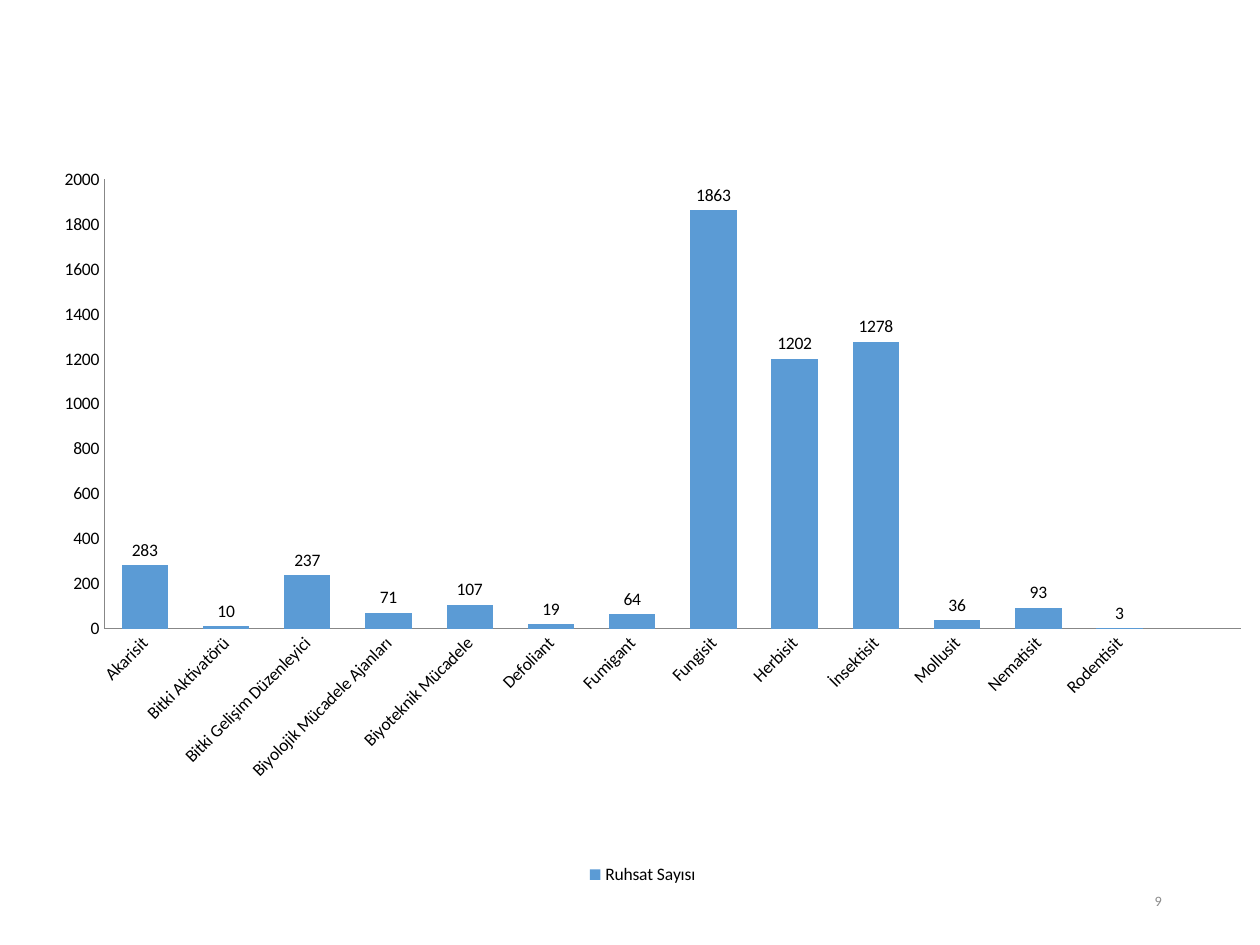
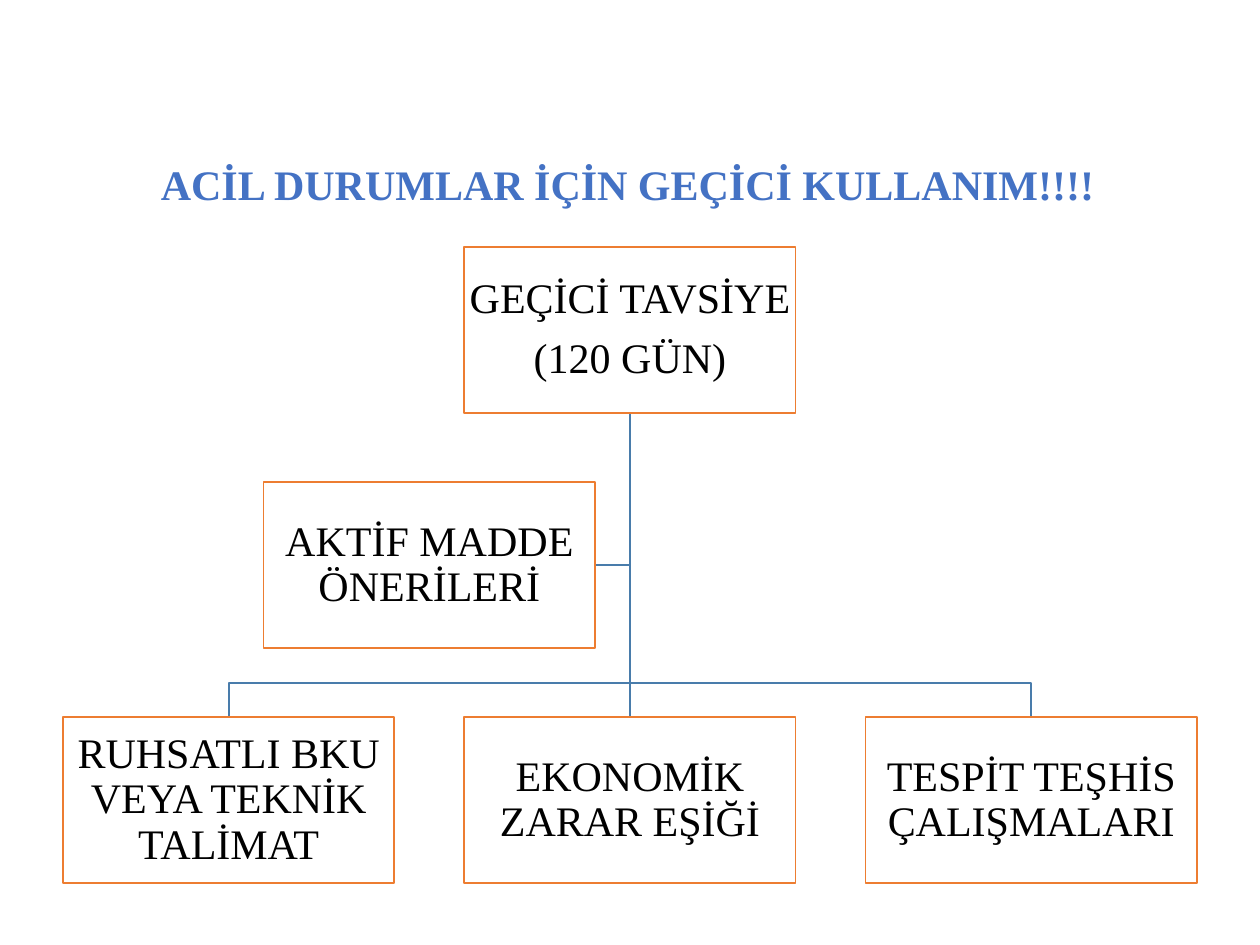
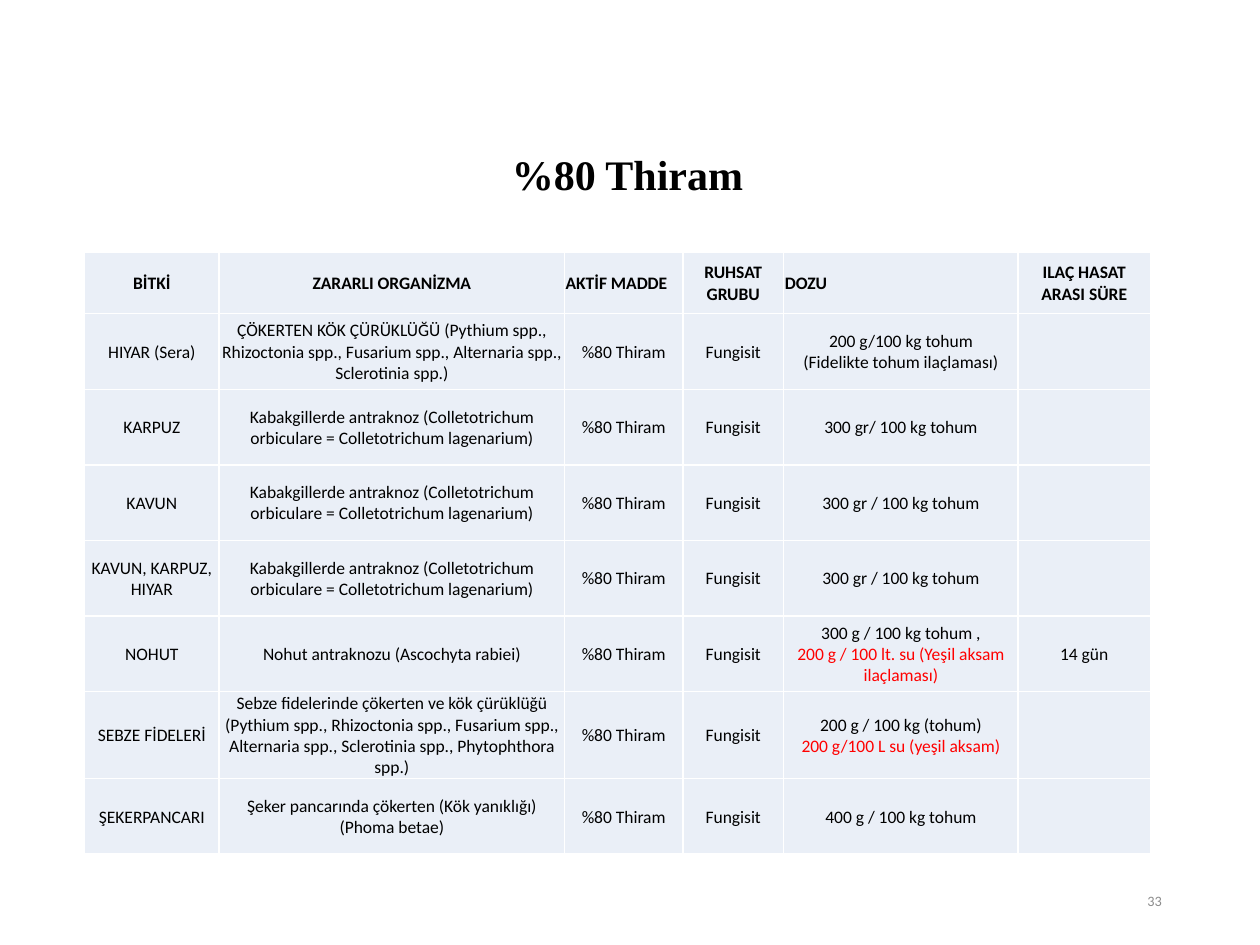
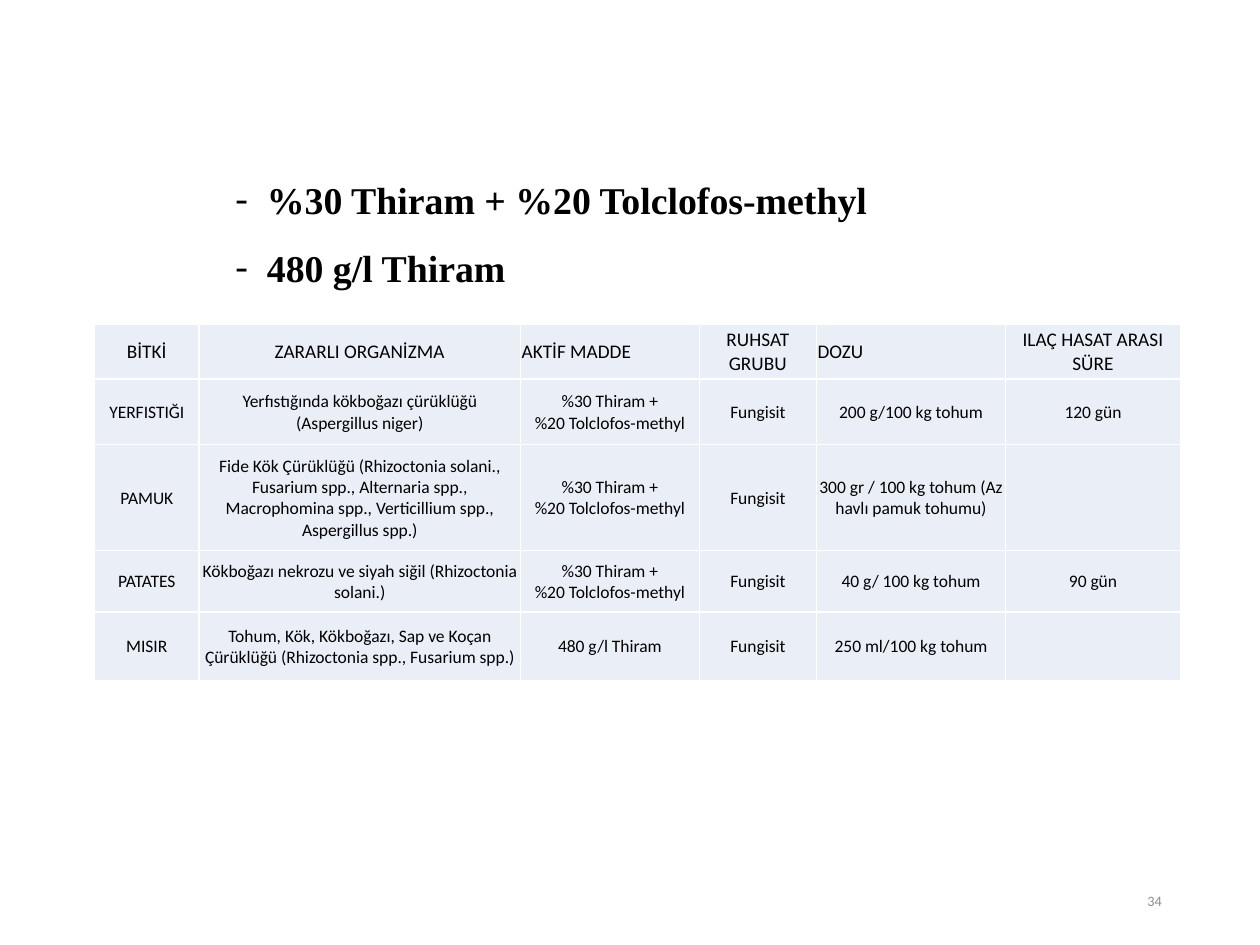
import pptx
import pptx.chart.data
import pptx.dml.color
import pptx.enum.chart
import pptx.enum.shapes
import pptx.enum.text
import pptx.oxml
import pptx.oxml.ns
import pptx.util
from lxml import etree

Inches = pptx.util.Inches
Pt = pptx.util.Pt
ALIGN = pptx.enum.text.PP_ALIGN
MIDDLE = pptx.enum.text.MSO_ANCHOR.MIDDLE
qn = pptx.oxml.ns.qn

# Shared style
COLORS = {
    "text": "000000", "white": "FFFFFF", "page": "8C8C8C", "heading": "4472C4",
    "bar": "5B9BD5", "axis": "878787", "branch": "497CAB", "box": "ED7D31",
    "cell": "EAEFF7", "alert": "FF0000",
}
SERIF, SANS = "Times New Roman", "Calibri"

# Slide 1: licences per product group
LICENCES = {
    "Akarisit": 283, "Bitki Aktivatörü": 10, "Bitki Gelişim Düzenleyici": 237,
    "Biyolojik Mücadele Ajanları": 71, "Biyoteknik Mücadele": 107, "Defoliant": 19,
    "Fumigant": 64, "Fungisit": 1863, "Herbisit": 1202, "İnsektisit": 1278,
    "Mollusit": 36, "Nematisit": 93, "Rodentisit": 3, "": None,
}
PLOT_LAYOUT = {"x": 0.064, "y": 0.02, "w": 0.921, "h": 0.62}

# Slide 2: organisation chart grid, in inches
BOX_WIDTH, BOX_HEIGHT = 2.63, 1.32
GRID_LEFT, GRID_TOP = 0.5, 1.96
COLUMN_PITCH, ROW_PITCH = 3.185, 1.865
TRUNK_X, FORK_Y = 5, 5.42
CHART_BOXES = [  # column, row, text
    (1, 0, "GEÇİCİ TAVSİYE\n(120 GÜN)"),
    (0, 2, "RUHSATLI BKU VEYA TEKNİK TALİMAT"),
    (1, 2, "EKONOMİK ZARAR EŞİĞİ"),
    (2, 2, "TESPİT TEŞHİS ÇALIŞMALARI"),
    (0.5, 1, "AKTİF MADDE ÖNERİLERİ"),
]

# Slides 3 and 4: a cell is a text, or a pair of black and red text
HEADER = ["BİTKİ", "ZARARLI ORGANİZMA", "AKTİF MADDE", "RUHSAT GRUBU", "DOZU",
          "ILAÇ HASAT ARASI SÜRE"]
LEFT_HEADERS = ("AKTİF MADDE", "DOZU")
GROUP = "Fungisit"
SINGLE = "%80 Thiram"
MIXTURE = "%30 Thiram +\v%20 Tolclofos-methyl"
LIQUID = "480 g/l Thiram"
ANTHRACNOSE = ("Kabakgillerde antraknoz (Colletotrichum orbiculare = "
               "Colletotrichum lagenarium)")

SINGLE_ROWS = [
    ["HIYAR (Sera)", "ÇÖKERTEN KÖK ÇÜRÜKLÜĞÜ (Pythium spp., Rhizoctonia spp., "
     "Fusarium spp., Alternaria spp., Sclerotinia spp.)", SINGLE, GROUP,
     "200 g/100 kg tohum\v(Fidelikte tohum ilaçlaması)", ""],
    ["KARPUZ", ANTHRACNOSE, SINGLE, GROUP, "300 gr/ 100 kg tohum", ""],
    ["KAVUN", ANTHRACNOSE, SINGLE, GROUP, "300 gr / 100 kg tohum", ""],
    ["KAVUN, KARPUZ, HIYAR", ANTHRACNOSE, SINGLE, GROUP, "300 gr / 100 kg tohum", ""],
    ["NOHUT", "Nohut antraknozu (Ascochyta rabiei)", SINGLE, GROUP,
     ("300 g / 100 kg tohum ,", "200 g / 100 lt. su (Yeşil aksam ilaçlaması)"), "14 gün"],
    ["SEBZE FİDELERİ", "Sebze fidelerinde çökerten ve kök çürüklüğü (Pythium spp., "
     "Rhizoctonia spp., Fusarium spp., Alternaria spp., Sclerotinia spp., "
     "Phytophthora spp.)", SINGLE, GROUP,
     ("200 g / 100 kg (tohum)", "200 g/100 L su (yeşil aksam)"), ""],
    ["ŞEKERPANCARI", "Şeker pancarında çökerten (Kök yanıklığı) (Phoma betae)",
     SINGLE, GROUP, "400 g / 100 kg tohum", ""],
]
MIXTURE_ROWS = [
    ["YERFISTIĞI", "Yerfıstığında kökboğazı çürüklüğü (Aspergillus niger)",
     MIXTURE, GROUP, "200 g/100 kg tohum", "120 gün"],
    ["PAMUK", "Fide Kök Çürüklüğü (Rhizoctonia solani., Fusarium spp., Alternaria spp., "
     "Macrophomina spp., Verticillium spp., Aspergillus spp.)",
     MIXTURE, GROUP, "300 gr / 100 kg tohum (Az havlı pamuk tohumu)", ""],
    ["PATATES", "Kökboğazı nekrozu ve siyah siğil (Rhizoctonia solani.)",
     MIXTURE, GROUP, "40 g/ 100 kg tohum", "90 gün"],
    ["MISIR", "Tohum, Kök, Kökboğazı, Sap ve Koçan Çürüklüğü (Rhizoctonia spp., "
     "Fusarium spp.)", LIQUID, GROUP, "250 ml/100 kg tohum", ""],
]


def rgb(name):
    return pptx.dml.color.RGBColor.from_string(COLORS[name])


def style_font(font, size, face, color="text", bold=False):
    font.size, font.name, font.bold = Pt(size), face, bold
    font.color.rgb = rgb(color)


def style_text(text_frame, size, face, color="text", bold=False, align=ALIGN.CENTER,
               spacing=None):
    text_frame.word_wrap = True
    text_frame.vertical_anchor = MIDDLE
    for paragraph in text_frame.paragraphs:
        paragraph.alignment = align
        paragraph.line_spacing = spacing
        for run in paragraph.runs:
            style_font(run.font, size, face, color, bold)


def set_margins(target, side, bottom):
    target.margin_left = target.margin_right = target.margin_top = Inches(side)
    target.margin_bottom = Inches(bottom)


def add_text(slide, area, text, size, face, **style):
    text_frame = slide.shapes.add_textbox(*map(Inches, area)).text_frame
    text_frame.text = text
    style_text(text_frame, size, face, **style)
    return text_frame


def add_title(slide, area, text, size=24, **style):
    return add_text(slide, area, text, size, SERIF, bold=True, **style)


def add_page_number(slide, number):
    add_text(slide, (7.07, 6.95, 2.25, 0.4), str(number), 8.2, SANS,
             color="page", align=ALIGN.RIGHT)


def add_dash_bullets(text_frame, indent):
    for paragraph in text_frame.paragraphs:
        properties = paragraph._p.get_or_add_pPr()
        properties.set("marL", str(Inches(indent)))
        properties.set("indent", str(-Inches(indent)))
        etree.SubElement(properties, qn("a:buFont")).set("typeface", SERIF)
        etree.SubElement(properties, qn("a:buChar")).set("char", "-")


# Column chart
def set_plot_layout(chart):
    plot_area = chart.element.xpath("c:chart/c:plotArea")[0]
    for layout in plot_area.findall(qn("c:layout")):
        plot_area.remove(layout)
    layout = etree.Element(qn("c:layout"))
    manual = etree.SubElement(layout, qn("c:manualLayout"))
    settings = [("layoutTarget", "inner"), ("xMode", "edge"), ("yMode", "edge")]
    for name, value in settings + list(PLOT_LAYOUT.items()):
        etree.SubElement(manual, qn("c:" + name)).set("val", str(value))
    plot_area.insert(0, layout)


def add_licence_chart(slide):
    data = pptx.chart.data.CategoryChartData()
    data.categories = list(LICENCES)
    data.add_series("Ruhsat Sayısı", list(LICENCES.values()))
    chart = slide.shapes.add_chart(
        pptx.enum.chart.XL_CHART_TYPE.COLUMN_CLUSTERED,
        *map(Inches, (0.2, 1.31, 9.8, 5.75)), data).chart
    chart.has_title = False
    style_font(chart.font, 10, SANS)
    chart.has_legend = True
    chart.legend.position = pptx.enum.chart.XL_LEGEND_POSITION.BOTTOM
    chart.legend.include_in_layout = False

    for axis in (chart.category_axis, chart.value_axis):
        axis.has_major_gridlines = False
        axis.major_tick_mark = pptx.enum.chart.XL_TICK_MARK.NONE
        axis.minor_tick_mark = pptx.enum.chart.XL_TICK_MARK.NONE
        axis.format.line.color.rgb = rgb("axis")
        style_font(axis.tick_labels.font, 10, SANS)
    chart.value_axis.minimum_scale, chart.value_axis.maximum_scale = 0, 2000
    chart.value_axis.major_unit = 200
    label_body = chart.category_axis._element.find(qn("c:txPr")).find(qn("a:bodyPr"))
    label_body.set("rot", str(-45 * 60000))

    plot = chart.plots[0]
    plot.gap_width = 75
    plot.vary_by_categories = False
    plot.has_data_labels = True
    plot.data_labels.show_value = True
    plot.data_labels.position = pptx.enum.chart.XL_LABEL_POSITION.OUTSIDE_END
    style_font(plot.data_labels.font, 10, SANS)
    fill = plot.series[0].format.fill
    fill.solid()
    fill.fore_color.rgb = rgb("bar")
    set_plot_layout(chart)


# Organisation chart
def box_corner(column, row):
    return GRID_LEFT + column * COLUMN_PITCH, GRID_TOP + row * ROW_PITCH


def add_chart_box(slide, column, row, text):
    area = (*box_corner(column, row), BOX_WIDTH, BOX_HEIGHT)
    box = slide.shapes.add_shape(pptx.enum.shapes.MSO_SHAPE.RECTANGLE, *map(Inches, area))
    box.shadow.inherit = False
    box.fill.solid()
    box.fill.fore_color.rgb = rgb("white")
    box.line.color.rgb = rgb("box")
    box.line.width = Pt(1)
    box.text_frame.text = text
    set_margins(box.text_frame, 0.02, 0.02)
    style_text(box.text_frame, 24, SERIF, spacing=0.9)
    for paragraph in box.text_frame.paragraphs:
        paragraph.space_after = Pt(8.4)


def style_branch(shape):
    shape.line.color.rgb = rgb("branch")
    shape.line.width = Pt(1)


def add_bent_branch(slide, points):
    corners = [(Inches(x), Inches(y)) for x, y in points]
    builder = slide.shapes.build_freeform(*corners[0])
    builder.add_line_segments(corners[1:], close=False)
    branch = builder.convert_to_shape()
    branch.shadow.inherit = False
    branch.fill.background()
    style_branch(branch)


def add_branches(slide):
    start = (TRUNK_X, GRID_TOP + BOX_HEIGHT)
    side_left, side_top = box_corner(0.5, 1)
    side_middle = side_top + BOX_HEIGHT / 2
    add_bent_branch(slide, [start, (TRUNK_X, side_middle),
                            (side_left + BOX_WIDTH, side_middle)])
    for column in (0, 2):
        left, top = box_corner(column, 2)
        center = left + BOX_WIDTH / 2
        add_bent_branch(slide, [start, (TRUNK_X, FORK_Y), (center, FORK_Y), (center, top)])
    trunk = slide.shapes.add_connector(
        pptx.enum.shapes.MSO_CONNECTOR.STRAIGHT,
        *map(Inches, (*start, TRUNK_X, box_corner(1, 2)[1])))
    style_branch(trunk)
    etree.SubElement(trunk._element.spPr, qn("a:effectLst"))


# Tables
def set_cell_borders(cell):
    properties = cell._tc.get_or_add_tcPr()
    for side in ("lnL", "lnR", "lnT", "lnB"):
        line = etree.SubElement(properties, qn("a:" + side), w=str(Pt(1)))
        fill = etree.SubElement(line, qn("a:solidFill"))
        etree.SubElement(fill, qn("a:srgbClr"), val=COLORS["white"])


def fill_cell(cell, content, size, bold):
    black, red = content if isinstance(content, tuple) else (content, "")
    cell.text = black
    align = ALIGN.LEFT if black in LEFT_HEADERS else ALIGN.CENTER
    style_text(cell.text_frame, size, SANS, bold=bold, align=align)
    if red:
        paragraph = cell.text_frame.paragraphs[0]
        paragraph.add_line_break()
        run = paragraph.add_run()
        run.text = red
        style_font(run.font, size, SANS, "alert")
    cell.vertical_anchor = MIDDLE
    set_margins(cell, 0.01, 0)
    set_cell_borders(cell)
    cell.fill.solid()
    cell.fill.fore_color.rgb = rgb("cell")


def add_dose_table(slide, left, top, widths, heights, rows, header_size, header_bold):
    area = (left, top, sum(widths), sum(heights))
    table = slide.shapes.add_table(len(heights), len(widths), *map(Inches, area)).table
    table.first_row = table.horz_banding = False
    for column, width in zip(table.columns, widths):
        column.width = Inches(width)
    for row, height in zip(table.rows, heights):
        row.height = Inches(height)
    for row_index, contents in enumerate([HEADER] + rows):
        is_header = row_index == 0
        for column_index, content in enumerate(contents):
            fill_cell(table.cell(row_index, column_index), content,
                      header_size if is_header else 10, is_header and header_bold)


def main():
    presentation = pptx.Presentation()
    presentation.slide_width, presentation.slide_height = Inches(10), Inches(7.5)
    blank = presentation.slide_layouts[6]
    licences, emergency, single, mixture = [
        presentation.slides.add_slide(blank) for _ in range(4)]

    # Licence counts
    add_page_number(licences, 9)
    add_licence_chart(licences)

    # Emergency use
    add_title(emergency, (0.67, 0.76, 8.62, 1.45),
              "ACİL DURUMLAR İÇİN GEÇİCİ KULLANIM!!!!", color="heading", spacing=0.9)
    add_branches(emergency)
    for column, row, text in CHART_BOXES:
        add_chart_box(emergency, column, row, text)

    # Single substance
    add_title(single, (0.67, 0.68, 8.62, 1.45), SINGLE, spacing=0.9)
    add_dose_table(single, 0.67, 2, [1.07, 2.74, 0.94, 0.8, 1.86, 1.05],
                   [0.49] + [0.6] * 5 + [0.69, 0.6], SINGLE_ROWS, 10, True)
    add_page_number(single, 33)

    # Mixture and liquid
    title = add_title(mixture, (1.77, 1.15, 6.06, 1.22),
                      "%30 Thiram + %20 Tolclofos-methyl\n" + LIQUID,
                      size=21.6, align=ALIGN.LEFT, spacing=1.5)
    add_dash_bullets(title, 0.25)
    add_dose_table(mixture, 0.75, 2.57, [0.83, 2.55, 1.42, 0.93, 1.5, 1.39],
                   [0.44, 0.52, 0.84, 0.49, 0.54], MIXTURE_ROWS, 11, False)
    add_page_number(mixture, 34)

    presentation.save("out.pptx")


if __name__ == "__main__":
    main()
